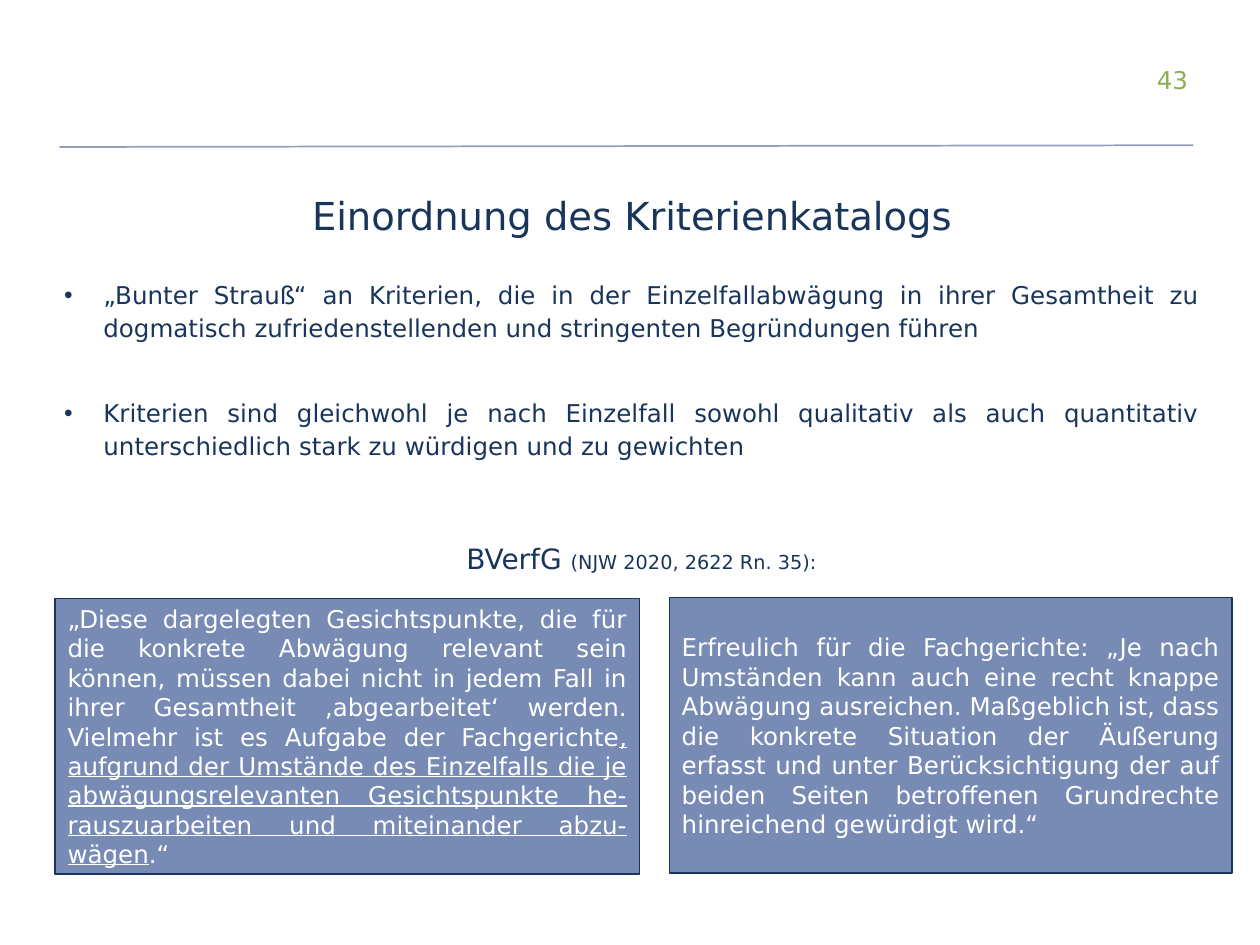
"""Build the slide that puts the catalogue of criteria into context."""
from lxml import etree
from pptx import Presentation
from pptx.dml.color import RGBColor
from pptx.enum.shapes import MSO_CONNECTOR, MSO_SHAPE
from pptx.enum.text import MSO_ANCHOR, PP_ALIGN
from pptx.oxml.ns import qn
from pptx.util import Pt

LEFT, CENTER, RIGHT, JUSTIFY = PP_ALIGN.LEFT, PP_ALIGN.CENTER, PP_ALIGN.RIGHT, PP_ALIGN.JUSTIFY
TOP, MIDDLE, BOTTOM = MSO_ANCHOR.TOP, MSO_ANCHOR.MIDDLE, MSO_ANCHOR.BOTTOM
STRAIGHT, RECTANGLE = MSO_CONNECTOR.STRAIGHT, MSO_SHAPE.RECTANGLE
FONT = "DejaVu Sans"
COLORS = {"navy": "19355C", "panel": "788BB5", "rule": "949EB7", "number": "8DB053", "white": "FFFFFF"}
BULLETS = [
    "„Bunter Strauß“ an Kriterien, die in der Einzelfallabwägung in ihrer Gesamtheit zu "
    "dogmatisch zufriedenstellenden und stringenten Begründungen führen",
    "Kriterien sind gleichwohl je nach Einzelfall sowohl qualitativ als auch quantitativ "
    "unterschiedlich stark zu würdigen und zu gewichten",
]
COURT_QUOTE = [
    ("„Diese dargelegten Gesichtspunkte, die für die konkrete Abwägung relevant sein können, "
     "müssen dabei nicht in jedem Fall in ihrer Gesamtheit ‚abgearbeitet‘ werden. "
     "Vielmehr ist es Aufgabe der Fachgerichte", False),
    (", aufgrund der Umstände des Einzelfalls die je abwägungsrelevanten Gesichtspunkte "
     "he-rauszuarbeiten und miteinander abzu-wägen", True),
    (".“", False),
]
BREVITY_QUOTE = [
    ("Erfreulich für die Fachgerichte: „Je nach Umständen kann auch eine recht knappe Abwägung "
     "ausreichen. Maßgeblich ist, dass die konkrete Situation der Äußerung erfasst und unter "
     "Berücksichtigung der auf beiden Seiten betroffenen Grundrechte hinreichend gewürdigt wird.“", False),
]


def color(name):
    """Return the named colour."""
    return RGBColor.from_string(COLORS[name])


def style(paragraph, size, color_name, alignment):
    """Set the font and alignment of a paragraph."""
    paragraph.alignment = alignment
    paragraph.font.name = FONT
    paragraph.font.color.rgb = color(color_name)
    if size:
        paragraph.font.size = Pt(size)


def add_text_box(slide, box, anchor=TOP, margins=(7.2, 3.6)):
    """Add a wrapping text box and return its text frame."""
    frame = slide.shapes.add_textbox(*map(Pt, box)).text_frame
    frame.word_wrap = True
    frame.vertical_anchor = anchor
    frame.margin_left = frame.margin_right = Pt(margins[0])
    frame.margin_top = frame.margin_bottom = Pt(margins[1])
    return frame


def add_label(slide, box, text, size, color_name, alignment, anchor, margins=(7.2, 3.6)):
    """Add a one-paragraph label."""
    paragraph = add_text_box(slide, box, anchor, margins).paragraphs[0]
    paragraph.text = text
    style(paragraph, size, color_name, alignment)


def add_bullets(slide, box, texts):
    """Add justified paragraphs with hanging bullets."""
    frame = add_text_box(slide, box)
    for index, text in enumerate(texts):
        paragraph = frame.add_paragraph() if index else frame.paragraphs[0]
        paragraph.text = text
        paragraph.line_spacing = 1.1
        paragraph.space_before = Pt(30.5 if index else 0)
        properties = paragraph._p.get_or_add_pPr()
        properties.set("marL", str(Pt(22.5)))
        properties.set("indent", str(Pt(-22.5)))
        etree.SubElement(properties, qn("a:buFont"), typeface="Arial")
        etree.SubElement(properties, qn("a:buChar"), char="•")
        style(paragraph, 14, "navy", JUSTIFY)


def add_citation(slide, box, parts):
    """Add a line whose parts differ in size."""
    paragraph = add_text_box(slide, box, margins=(0, 0)).paragraphs[0]
    style(paragraph, None, "navy", LEFT)
    for text, size in parts:
        run = paragraph.add_run()
        run.text = text
        run.font.size = Pt(size)


def add_quote(slide, box, parts):
    """Add a filled panel holding a justified quotation."""
    shape = slide.shapes.add_shape(RECTANGLE, *map(Pt, box))
    shape.shadow.inherit = False
    shape.fill.solid()
    shape.fill.fore_color.rgb = color("panel")
    shape.line.color.rgb = color("navy")
    shape.line.width = Pt(0.75)
    shape.text_frame.word_wrap = True
    shape.text_frame.vertical_anchor = MIDDLE
    paragraph = shape.text_frame.paragraphs[0]
    style(paragraph, 14, "white", JUSTIFY)
    for text, underlined in parts:
        run = paragraph.add_run()
        run.text = text
        if underlined:
            run.font.underline = True


def add_rule(slide, start, end):
    """Add the thin line below the header."""
    connector = slide.shapes.add_connector(STRAIGHT, *map(Pt, start + end))
    connector.line.color.rgb = color("rule")
    connector.line.width = Pt(1)
    etree.SubElement(connector._element.spPr, qn("a:effectLst"))


def main():
    """Build and save the presentation."""
    presentation = Presentation()
    presentation.slide_width, presentation.slide_height = Pt(720), Pt(540)
    slide = presentation.slides.add_slide(presentation.slide_layouts[6])
    add_label(slide, (516, 34, 170, 20), "43", 14, "number", RIGHT, BOTTOM, (7.2, 0))
    add_rule(slide, (34, 84), (682, 83))
    add_label(slide, (29.5, 100, 663, 45.5), "Einordnung des Kriterienkatalogs", 22, "navy", CENTER, MIDDLE)
    add_bullets(slide, (29.5, 155, 663, 385), BULLETS)
    add_citation(slide, (266.5, 309.5, 230, 22), [("BVerfG ", 16), ("(NJW 2020, 2622 Rn. 35):", 11)])
    add_quote(slide, (31.5, 342, 334, 157.5), COURT_QUOTE)
    add_quote(slide, (382.5, 341.5, 321.5, 157.5), BREVITY_QUOTE)
    presentation.save("out.pptx")


if __name__ == "__main__":
    main()
